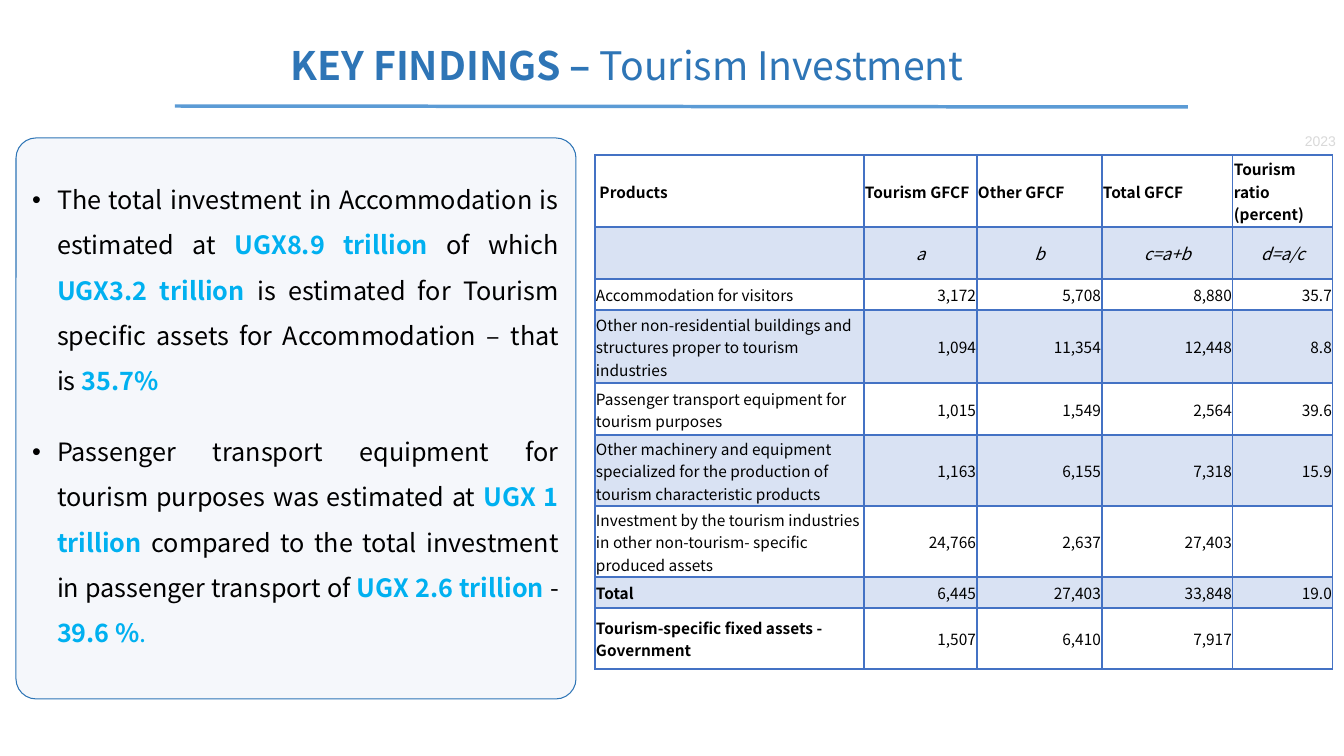
from lxml import etree
from pptx import Presentation, util as u
from pptx.dml.color import RGBColor
from pptx.enum import shapes, text
from pptx.oxml.ns import qn

FONT = "Noto Sans CJK SC"
BLACK = RGBColor(0, 0, 0)
CYAN = RGBColor(0x00, 0xB0, 0xF0)
NAVY = RGBColor(0x2E, 0x75, 0xB6)
RULE = RGBColor(0x5B, 0x9B, 0xD5)
GRID = RGBColor(0x44, 0x72, 0xC4)
PALE = RGBColor(0xDA, 0xE3, 0xF3)
GREY = RGBColor(0xD9, 0xD9, 0xD9)
LEFT, MID, RIGHT = text.PP_ALIGN.LEFT, text.PP_ALIGN.CENTER, text.PP_ALIGN.RIGHT

KEY = {"color": CYAN, "bold": True}
HEAD = [("KEY FINDINGS – ", {"bold": True}), ("Tourism Investment", {})]
YEAR = "2023"
FACTS = [
    [("The total investment in Accommodation is estimated at ", {}),
     ("UGX8.9 trillion ", KEY), ("of which ", {}), ("UGX3.2 trillion ", KEY),
     ("is estimated for Tourism specific assets for Accommodation – that is ", {}),
     ("35.7%", KEY)],
    [("Passenger transport equipment for tourism purposes was estimated at ", {}),
     ("UGX 1 trillion ", KEY),
     ("compared to the total investment in passenger transport of ", {}),
     ("UGX 2.6 trillion ", KEY), ("- ", {}), ("39.6 %", KEY),
     (". ", {"color": CYAN})],
]
ROWS = [
    (" Products", "Tourism GFCF", "Other GFCF", "Total GFCF", "Tourism ratio\n(percent)"),
    ("", "a", "b", "c=a+b", "d=a/c"),
    ("Accommodation for visitors", "3,172", "5,708", "8,880", "35.7"),
    ("Other non-residential buildings and structures proper to tourism industries",
     "1,094", "11,354", "12,448", "8.8"),
    ("Passenger transport equipment for tourism purposes",
     "1,015", "1,549", "2,564", "39.6"),
    ("Other machinery and equipment specialized for the production of "
     "tourism characteristic products", "1,163", "6,155", "7,318", "15.9"),
    ("Investment by the tourism industries in other non-tourism- specific "
     "produced assets", "24,766", "2,637", "27,403", ""),
    ("Total", "6,445", "27,403", "33,848", "19.0"),
    ("Tourism-specific fixed assets - Government", "1,507", "6,410", "7,917", ""),
]
WIDTHS = (269, 113, 125, 131, 100)
HEIGHTS = (72, 52, 31, 73, 52, 71, 71, 31, 61)
BOLD = (7, 8)  # rows whose label is bold


def px(n):
    return u.Emu(round(n * 914400 / 100.8))


def box(*sides):
    return [px(n) for n in sides]


def move(shape, *sides):
    shape.left, shape.top, shape.width, shape.height = box(*sides)


def write(frame, paras, size, color=BLACK, font=FONT, bold=False, italic=False,
          align=LEFT, lines=1.0, gap=0, hang=0):
    """Fill a text frame; a paragraph is a string or a list of (text, format) runs."""
    for i, runs in enumerate(paras):
        para = frame.paragraphs[0] if i == 0 else frame.add_paragraph()
        para.alignment, para.line_spacing = align, lines
        para.space_before = u.Pt(gap if i else 0)
        if hang:
            props = para._p.get_or_add_pPr()
            props.set("marL", str(px(hang)))
            props.set("indent", str(-px(hang)))
        for words, fmt in [(runs, {})] if isinstance(runs, str) else runs:
            run = para.add_run()
            run.text = words
            run.font.name, run.font.size = font, u.Pt(size)
            run.font.bold, run.font.italic = fmt.get("bold", bold), italic
            run.font.color.rgb = fmt.get("color", color)


def tint(part, color, share):
    """Fill with a colour that is opaque to the given percentage."""
    part.fill.solid()
    part.fill.fore_color.rgb = color
    root = part._tc if hasattr(part, "_tc") else part.element
    tone = next(root.iter(qn("a:solidFill")))[0]
    etree.SubElement(tone, qn("a:alpha"), val=str(share * 1000))


def edge(cell, top, base):
    """Draw the four borders, with top and base widths in points."""
    props = cell._tc.get_or_add_tcPr()
    for i, (side, wide) in enumerate(zip("LRTB", (1, 1, top, base))):
        line = etree.Element(qn("a:ln" + side), w=str(u.Pt(wide)))
        fill = etree.SubElement(line, qn("a:solidFill"))
        etree.SubElement(fill, qn("a:srgbClr"), val=str(GRID))
        props.insert(i, line)


def look(r, c):
    """Text format of the table cell in row r and column c."""
    if r == 0:
        return {"size": 11, "bold": True}
    if r == 1:
        return {"size": 12, "italic": True, "align": MID}
    if c == 0:
        return {"size": 11, "bold": r in BOLD}
    return {"size": 11, "align": RIGHT}


def add_grid(slide):
    frame = slide.shapes.add_table(len(ROWS), len(WIDTHS),
                                   *box(595, 155, sum(WIDTHS), sum(HEIGHTS)))
    table = frame.table
    table.first_row = table.horz_banding = False
    for col, wide in zip(table.columns, WIDTHS):
        col.width = px(wide)
    for r, (row, tall) in enumerate(zip(table.rows, HEIGHTS)):
        row.height = px(tall)
        for c, cell in enumerate(row.cells):
            cell.margin_left = cell.margin_top = cell.margin_right = px(1)
            cell.margin_bottom = 0
            cell.vertical_anchor = text.MSO_ANCHOR.MIDDLE
            if r % 2:
                tint(cell, GRID, 20)
            else:
                cell.fill.background()
            edge(cell, 2 if r == 1 else 1, 2 if r == 0 else 1)
            if ROWS[r][c]:
                write(cell.text_frame, ROWS[r][c].split("\n"), **look(r, c))


def add_rule(slide):
    rule = slide.shapes.add_connector(shapes.MSO_CONNECTOR.STRAIGHT,
                                      *box(175, 106, 1188, 107))
    rule.line.color.rgb, rule.line.width = RULE, u.Pt(2.5)
    etree.SubElement(rule.element.spPr, qn("a:effectLst"))


def add_year(slide):
    frame = slide.shapes.add_textbox(*box(1295, 128, 60, 27)).text_frame
    frame.word_wrap = True
    write(frame, [YEAR], 10, color=GREY, font="Arial")


def add_panel(slide):
    panel = slide.shapes.add_shape(shapes.MSO_SHAPE.ROUNDED_RECTANGLE,
                                   *box(16, 138, 560, 561))
    panel.adjustments[0] = 0.036
    panel.shadow.inherit = False
    tint(panel, PALE, 25)
    panel.line.color.rgb, panel.line.width = NAVY, u.Pt(0.75)


def set_holder(shape, sides, paras, **fmt):
    move(shape, *sides)
    frame = shape.text_frame
    frame.auto_size = text.MSO_AUTO_SIZE.NONE
    frame.word_wrap = True
    frame.vertical_anchor = text.MSO_ANCHOR.MIDDLE
    write(frame, paras, **fmt)


def main():
    deck = Presentation()
    deck.slide_width, deck.slide_height = px(1344), px(756)
    slide = deck.slides.add_slide(deck.slide_layouts[1])
    title, body = slide.placeholders
    add_rule(slide)
    add_year(slide)
    add_grid(slide)
    add_panel(slide)
    set_holder(title, (145, 36, 964, 57), [HEAD], size=28, color=NAVY, align=MID)
    set_holder(body, (22, 138, 547, 561), FACTS, size=18, lines=1.5, gap=18,
               hang=25, align=text.PP_ALIGN.JUSTIFY)
    body.text_frame.margin_bottom = px(25)
    slide.shapes.element.append(body.element)  # list in front of its panel
    deck.save("out.pptx")


if __name__ == "__main__":
    main()
